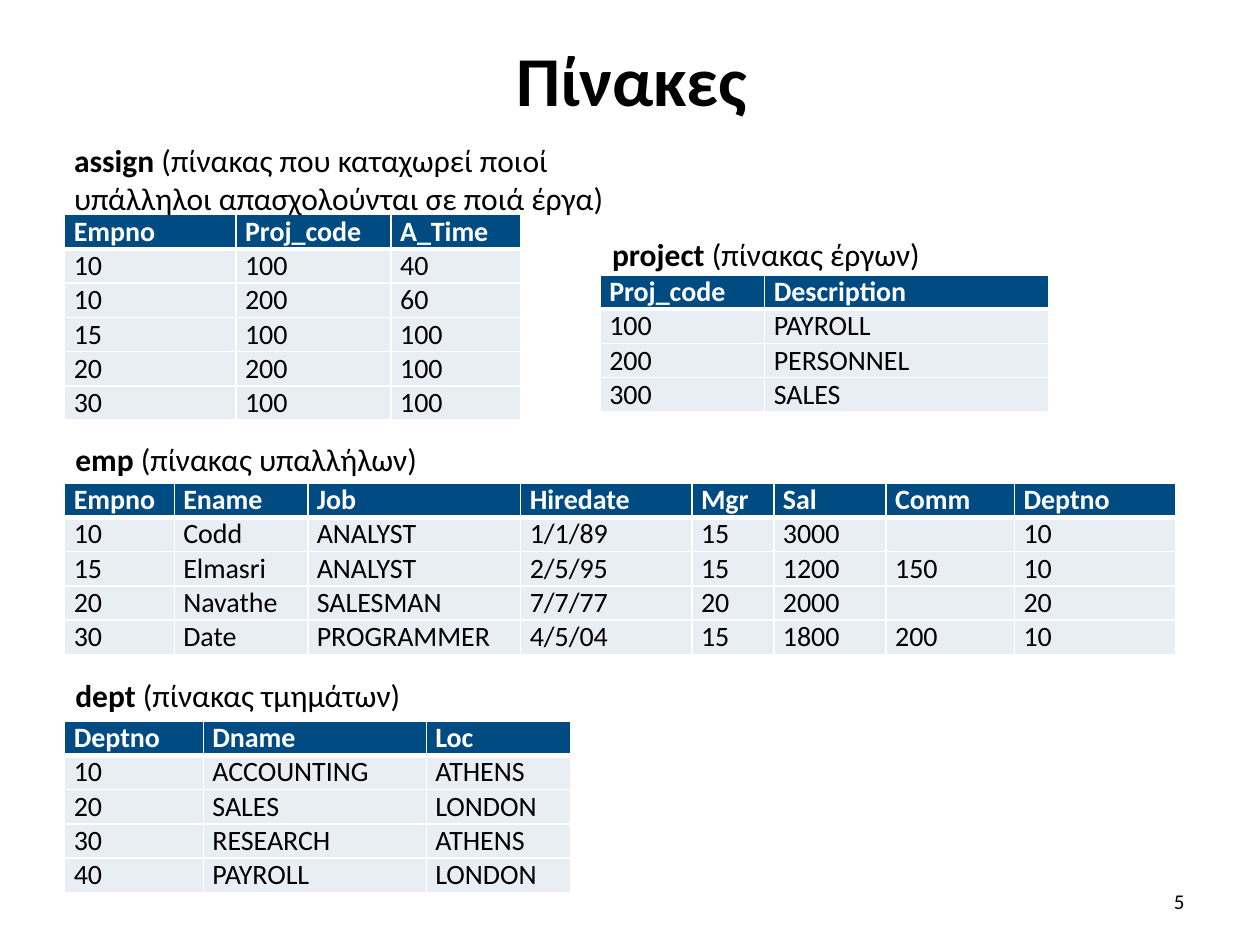
from lxml.etree import SubElement
from pptx import Presentation
from pptx.dml.color import RGBColor
from pptx.enum.text import MSO_ANCHOR, MSO_AUTO_SIZE, PP_ALIGN
from pptx.oxml.ns import qn
from pptx.util import Pt

FONT = "Calibri"
BLACK, WHITE, NAVY, PALE = "000000", "FFFFFF", "004B82", "E9EDF4"
ROW_HEIGHT = 19.2

# Each table: label (name, description), label box, label wraps, left, top, widths, rows
EMP = (("emp", " (πίνακας υπαλλήλων)"), (36, 247.7, 211.7, 28.8), False,
       37, 276, (62.6, 76.3, 121.7, 97.9, 46.8, 64.1, 73.4, 92.2), (
           ("Empno", "Ename", "Job", "Hiredate", "Mgr", "Sal", "Comm", "Deptno"),
           ("10", "Codd", "ANALYST", "1/1/89", "15", "3000", "", "10"),
           ("15", "Elmasri", "ANALYST", "2/5/95", "15", "1200", "150", "10"),
           ("20", "Navathe", "SALESMAN", "7/7/77", "20", "2000", "", "20"),
           ("30", "Date", "PROGRAMMER", "4/5/04", "15", "1800", "200", "10")))
ASSIGN = (("assign", " (πίνακας που καταχωρεί ποιοί υπάλληλοι απασχολούνται σε ποιά έργα)"),
          (35.3, 77, 360, 51.1), True,
          37, 122.6, (97.9, 88.6, 74.2), (
              ("Empno", "Proj_code", "A_Time"),
              ("10", "100", "40"),
              ("10", "200", "60"),
              ("15", "100", "100"),
              ("20", "200", "100"),
              ("30", "100", "100")))
PROJECT = (("project", " (πίνακας έργων)"), (342.7, 131, 191.5, 28.8), False,
           343, 157, (94, 162.4), (
               ("Proj_code", "Description"),
               ("100", "PAYROLL"),
               ("200", "PERSONNEL"),
               ("300", "SALES")))
DEPT = (("dept ", "(πίνακας τμημάτων)"), (36, 383, 201.6, 28.8), False,
        37, 412, (79.2, 127.4, 82.4), (
            ("Deptno", "Dname", "Loc"),
            ("10", "ACCOUNTING", "ATHENS"),
            ("20", "SALES", "LONDON"),
            ("30", "RESEARCH", "ATHENS"),
            ("40", "PAYROLL", "LONDON")))


def color(code):
    return RGBColor.from_string(code)


def points(*lengths):
    return [Pt(length) for length in lengths]


def add_span(para, text, size, bold=False, code=BLACK):
    span = para.add_run()
    span.text = text
    span.font.name = FONT
    span.font.size = Pt(size)
    span.font.bold = bold
    span.font.color.rgb = color(code)


def add_border(cell, side, width):
    line = SubElement(cell._tc.get_or_add_tcPr(), qn("a:ln" + side), w=str(Pt(width)))
    SubElement(SubElement(line, qn("a:solidFill")), qn("a:srgbClr"), val=WHITE)


def fill_cell(cell, text, row_index):
    is_header = row_index == 0
    cell.margin_left = cell.margin_right = Pt(5.2)
    cell.margin_top = cell.margin_bottom = 0
    # The rule under the header is shared by the first two rows
    for side, width in (("L", 1), ("R", 1),
                        ("T", 3 if row_index == 1 else 1),
                        ("B", 3 if is_header else 1)):
        add_border(cell, side, width)
    cell.fill.solid()
    cell.fill.fore_color.rgb = color(NAVY if is_header else PALE)
    para = cell.text_frame.paragraphs[0]
    if text:
        add_span(para, text, 16, is_header, WHITE if is_header else BLACK)
    else:
        # An empty cell needs the text size too, or its row grows
        SubElement(para._p, qn("a:endParaRPr"), sz="1600")


def add_grid(page, left, top, widths, rows):
    frame = page.shapes.add_table(
        len(rows), len(widths),
        *points(left, top, sum(widths), ROW_HEIGHT * len(rows)))
    grid = frame.table
    grid.horz_banding = False
    for column, width in zip(grid.columns, widths):
        column.width = Pt(width)
    for row_index, texts in enumerate(rows):
        grid.rows[row_index].height = Pt(ROW_HEIGHT)
        for column_index, text in enumerate(texts):
            fill_cell(grid.cell(row_index, column_index), text, row_index)


def add_label(page, place, label, wraps):
    box = page.shapes.add_textbox(*points(*place))
    box.text_frame.word_wrap = wraps
    box.text_frame.auto_size = MSO_AUTO_SIZE.SHAPE_TO_FIT_TEXT
    para = box.text_frame.paragraphs[0]
    name, description = label
    add_span(para, name, 18, bold=True)
    add_span(para, description, 18)


def add_title(page, place, text):
    box = page.shapes.title
    box.left, box.top, box.width, box.height = points(*place)
    box.text_frame.vertical_anchor = MSO_ANCHOR.MIDDLE
    para = box.text_frame.paragraphs[0]
    para.alignment = PP_ALIGN.CENTER
    add_span(para, text, 40, bold=True)


def add_page_number(page, place, number):
    box = page.shapes.add_textbox(*points(*place))
    box.text_frame.word_wrap = True
    box.text_frame.vertical_anchor = MSO_ANCHOR.MIDDLE
    para = box.text_frame.paragraphs[0]
    para.alignment = PP_ALIGN.RIGHT
    add_span(para, number, 12)


def main():
    deck = Presentation()
    deck.slide_width, deck.slide_height = points(720, 540)
    page = deck.slides.add_slide(deck.slide_layouts[5])

    add_title(page, (37, 9.4, 648, 71.3), "Πίνακες")
    # Tables first, so that the labels lie above them
    tables = (EMP, ASSIGN, PROJECT, DEPT)
    for _, _, _, left, top, widths, rows in tables:
        add_grid(page, left, top, widths, rows)
    for label, place, wraps, *_ in tables:
        add_label(page, place, label, wraps)
    add_page_number(page, (516, 500.4, 168, 28.8), "5")

    deck.save("out.pptx")


if __name__ == "__main__":
    main()
